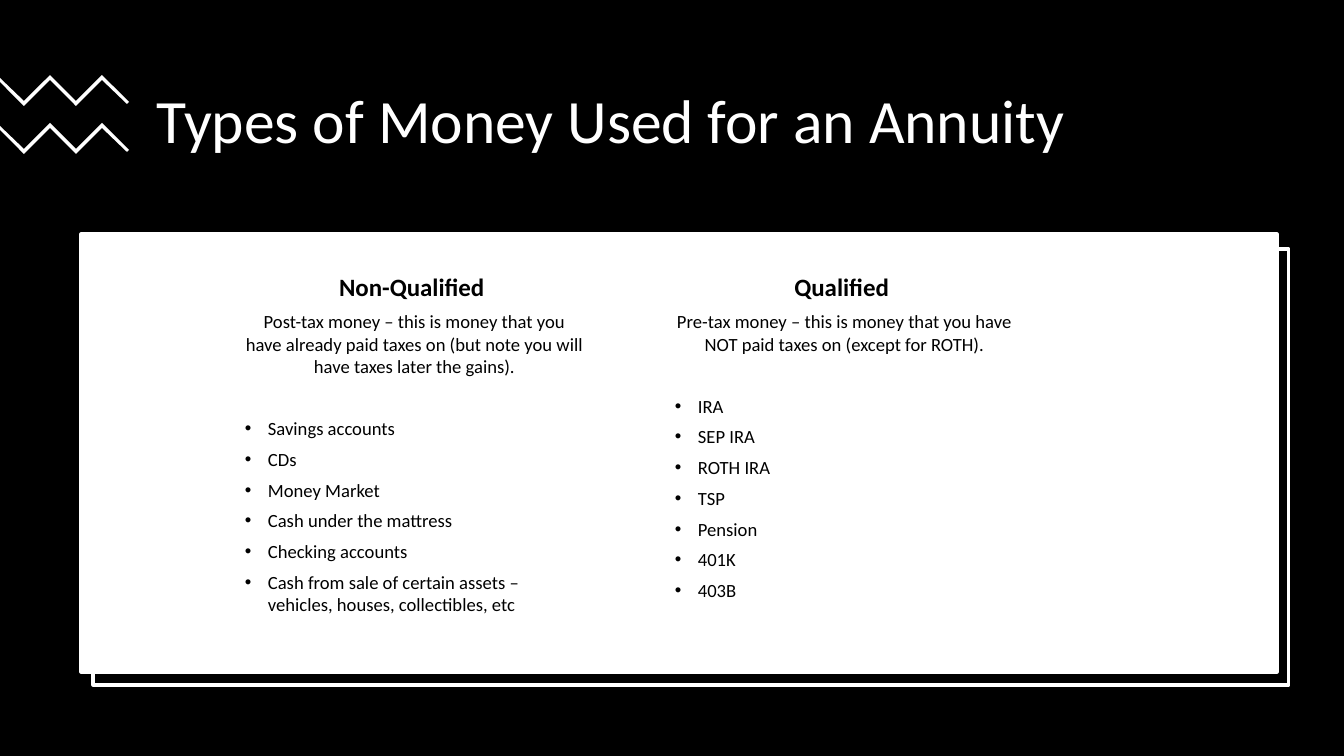
from lxml.etree import SubElement
from pptx import Presentation
from pptx.dml.color import RGBColor
from pptx.enum.shapes import MSO_SHAPE
from pptx.enum.text import MSO_ANCHOR, MSO_AUTO_SIZE, PP_ALIGN
from pptx.oxml.ns import qn
from pptx.util import Pt

PX = 914400 / 100.8
COLORS = {"black": "000000", "white": "FFFFFF"}
FONT = "Calibri"
INDENT = 23

deck = Presentation()
deck.slide_width = round(1344 * PX)
deck.slide_height = round(756 * PX)
page = deck.slides.add_slide(deck.slide_layouts[6])


def paint(shape, fill, line=None):
    shape.shadow.inherit = False
    shape.fill.solid()
    shape.fill.fore_color.rgb = RGBColor.from_string(COLORS[fill])
    if line:
        shape.line.color.rgb = RGBColor.from_string(COLORS[line])
        shape.line.width = Pt(2.25)
    else:
        shape.line.fill.background()


def add_span(para, text, size, color, bold=False):
    span = para.add_run()
    span.text = text
    span.font.name = FONT
    span.font.size = Pt(size)
    span.font.bold = bold
    span.font.color.rgb = RGBColor.from_string(COLORS[color])


# Backdrop, offset frame and white panel
panels = [
    (0, 0, 1344, 756, "black", None),
    (93, 249, 1196, 436, "black", "white"),
    (81, 234, 1196, 438, "white", "white"),
]
for left, top, width, height, fill, line in panels:
    panel = page.shapes.add_shape(
        MSO_SHAPE.RECTANGLE,
        *(round(length * PX) for length in (left, top, width, height)))
    paint(panel, fill, line)

# Two zigzag bands at the left edge
zigzag = [(50, 75), (76, 101), (102, 75), (129, 102), (127, 104), (102, 80),
          (76, 106), (50, 80), (24, 106), (0, 82), (0, 78), (24, 101)]
for drop in (0, 48):
    points = [(x, y + drop) for x, y in zigzag]
    builder = page.shapes.build_freeform(*points[0], scale=PX)
    builder.add_line_segments(points[1:], close=True)
    paint(builder.convert_to_shape(), "white")

# Title
title = page.shapes.add_textbox(
    *(round(length * PX) for length in (147, 62, 1075, 124)))
title.text_frame.word_wrap = True
title.text_frame.vertical_anchor = MSO_ANCHOR.MIDDLE
para = title.text_frame.paragraphs[0]
para.line_spacing = 0.9
add_span(para, "Types of Money Used for an Annuity", 44, "white")

# Two columns: heading, explanation, bulleted examples
columns = [
    (235, 396, "Non-Qualified ",
     "Post-tax money – this is money that you have already paid taxes on "
     "(but note you will have taxes later the gains).",
     ["Savings accounts", "CDs", "Money Market", "Cash under the mattress",
      "Checking accounts",
      "Cash from sale of certain assets – vehicles, houses, collectibles, etc"]),
    (665, 382, "Qualified ",
     "Pre-tax money – this is money that you have NOT paid taxes on "
     "(except for ROTH).",
     ["IRA", "SEP IRA", "ROTH IRA", "TSP", "Pension", "401K", "403B"]),
]
for left, height, heading, explanation, examples in columns:
    box = page.shapes.add_textbox(
        *(round(length * PX) for length in (left, 267, 359, height)))
    frame = box.text_frame
    frame.word_wrap = True
    frame.auto_size = MSO_AUTO_SIZE.SHAPE_TO_FIT_TEXT

    para = frame.paragraphs[0]
    para.alignment = PP_ALIGN.CENTER
    para.space_after = Pt(6)
    add_span(para, heading, 17.8, "black", bold=True)

    para = frame.add_paragraph()
    para.alignment = PP_ALIGN.CENTER
    para.space_after = Pt(28.3)
    add_span(para, explanation, 13.3, "black")

    for example in examples:
        para = frame.add_paragraph()
        para.space_after = Pt(6)
        add_span(para, example, 13.3, "black")
        props = para._p.get_or_add_pPr()
        props.set("marL", str(round(INDENT * PX)))
        props.set("indent", str(round(-INDENT * PX)))
        SubElement(props, qn("a:buFont"), typeface="Arial")
        SubElement(props, qn("a:buChar"), char="•")

deck.save("out.pptx")
